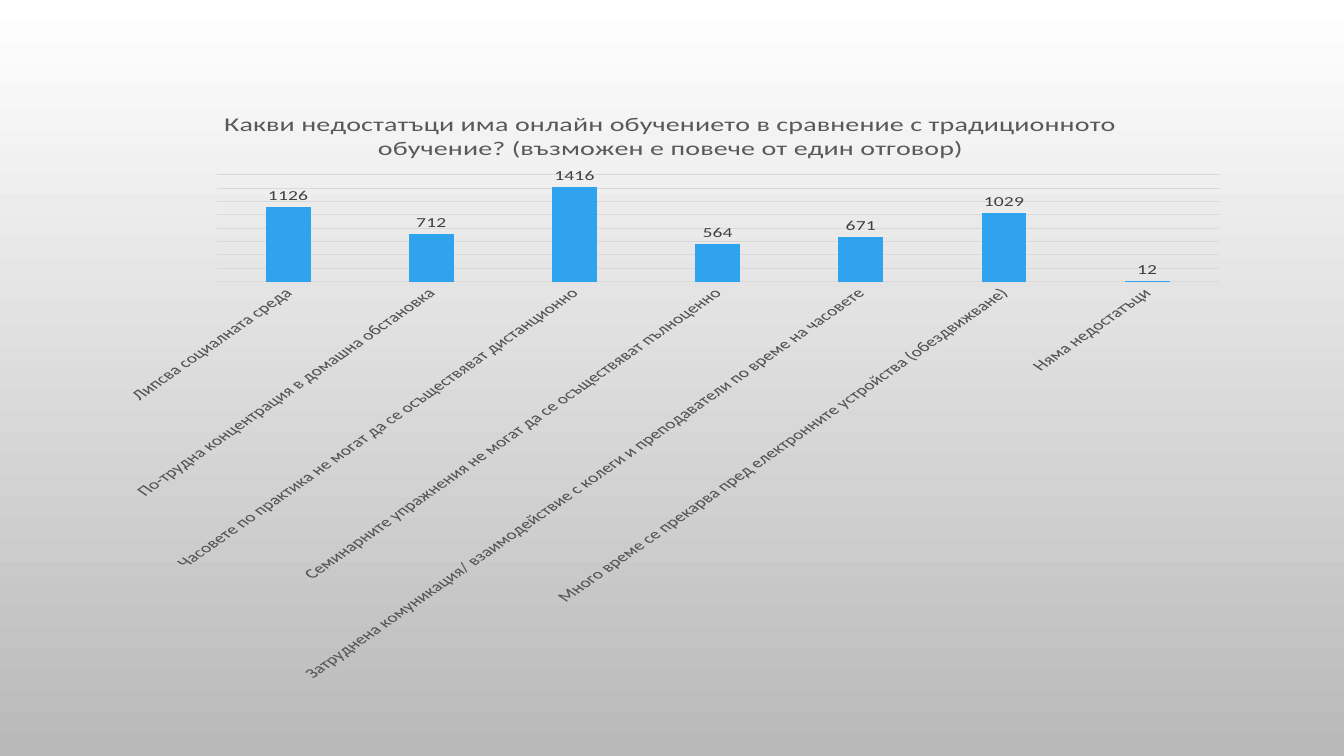
"""Build a slide with a column chart on the drawbacks of online learning."""
from dataclasses import dataclass

import pptx
import pptx.chart.data
import pptx.dml.color
import pptx.enum.chart
import pptx.oxml.ns
import pptx.util

Cm = pptx.util.Cm
Pt = pptx.util.Pt


@dataclass(frozen=True)
class Theme:
    """Colours, font and type sizes of the slide."""
    font: str = "Calibri"
    top: str = "FFFFFF"
    bottom: str = "B9B9B9"
    column: str = "2FA3EE"
    rule: str = "D9D9D9"
    text: str = "595959"
    value: str = "404040"
    title_size: int = 20
    label_size: int = 14


THEME = Theme()
AUTOMATIC_ROTATION = -60000000
TITLE = ("Какви недостатъци има онлайн обучението в сравнение с традиционното "
         "обучение? (възможен е повече от един отговор)")
ANSWERS = {
    "Липсва социалната среда": 1126,
    "По-трудна концентрация в домашна обстановка": 712,
    "Часовете по практика не могат да се осъществяват дистанционно": 1416,
    "Семинарните упражнения не могат да се осъществяват пълноценно": 564,
    "Затруднена комуникация/ взаимодействие с колеги и преподаватели "
    "по време на часовете": 671,
    "Много време се прекарва пред електронните устройства (обездвижване)": 1029,
    "Няма недостатъци": 12,
}


def colour(code):
    """Turn a hexadecimal code into a colour."""
    return pptx.dml.color.RGBColor.from_string(code)


def style_font(font, size, code):
    """Give a font the theme face, a size and a colour."""
    font.name = THEME.font
    font.size = Pt(size)
    font.bold = False
    font.color.rgb = colour(code)


def style_line(line):
    """Draw a thin pale rule."""
    line.width = Pt(0.75)
    line.color.rgb = colour(THEME.rule)


def paint_background(page):
    """Fill the page from light at the top to grey at the bottom."""
    fill = page.background.fill
    fill.gradient()
    fill.gradient_angle = 270
    for stop, code in zip(fill.gradient_stops, (THEME.top, THEME.bottom)):
        stop.color.rgb = colour(code)


def write_title(chart, text, size, code):
    """Write the chart title above the plot."""
    chart.has_title = True
    frame = chart.chart_title.text_frame
    chart.chart_title.include_in_layout = False
    span = frame.paragraphs[0].add_run()
    span.text = text
    style_font(span.font, size, code)


def style_axes(chart):
    """Let the category labels slant and keep only the grid of the value axis."""
    marks = pptx.enum.chart.XL_TICK_MARK
    answers = chart.category_axis
    answers.major_tick_mark = answers.minor_tick_mark = marks.NONE
    style_line(answers.format.line)
    style_font(answers.tick_labels.font, THEME.label_size, THEME.text)
    body = answers._element.find(
        f"{pptx.oxml.ns.qn('c:txPr')}/{pptx.oxml.ns.qn('a:bodyPr')}")
    body.set("rot", str(AUTOMATIC_ROTATION))
    body.set("vert", "horz")
    counts = chart.value_axis
    counts.visible = False
    counts.minimum_scale, counts.maximum_scale = 0, 1600
    counts.major_unit = 200
    counts.has_major_gridlines = True
    style_line(counts.major_gridlines.format.line)


def style_columns(plot):
    """Colour the columns and show their values on top."""
    plot.gap_width, plot.overlap = 219, -27
    plot.vary_by_categories = False
    series = plot.series[0]
    series.invert_if_negative = False
    series.format.fill.solid()
    series.format.fill.fore_color.rgb = colour(THEME.column)
    labels = series.data_labels
    labels.show_value = True
    labels.position = pptx.enum.chart.XL_LABEL_POSITION.OUTSIDE_END
    style_font(labels.font, THEME.label_size, THEME.value)


def add_answers_chart(page):
    """Add the column chart of all answers."""
    data = pptx.chart.data.CategoryChartData()
    data.categories = list(ANSWERS)
    data.add_series("Отговори", list(ANSWERS.values()))
    chart = page.shapes.add_chart(
        pptx.enum.chart.XL_CHART_TYPE.COLUMN_CLUSTERED,
        Cm(2.54), Cm(2.39), Cm(28.75), Cm(14.78), data).chart
    chart.has_legend = False
    style_font(chart.font, 10, "000000")
    write_title(chart, TITLE, size=THEME.title_size, code=THEME.text)
    style_axes(chart)
    style_columns(chart.plots[0])


def main():
    """Create the deck and save it."""
    deck = pptx.Presentation()
    deck.slide_width, deck.slide_height = Cm(33.87), Cm(19.05)
    page = deck.slides.add_slide(deck.slide_layouts[6])
    paint_background(page)
    add_answers_chart(page)
    deck.save("out.pptx")


if __name__ == "__main__":
    main()
